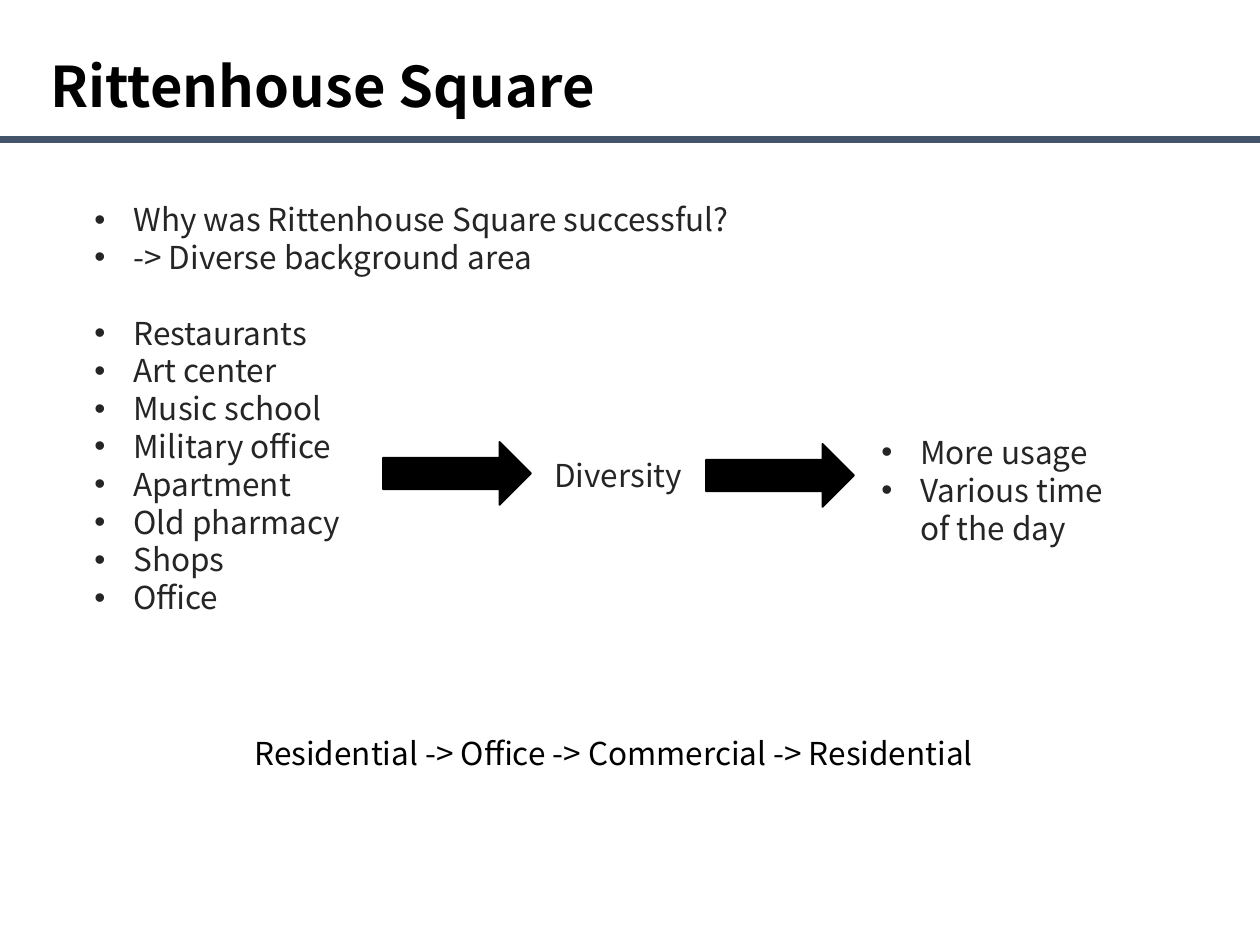
from lxml.etree import SubElement
from pptx import Presentation
from pptx.dml.color import RGBColor
from pptx.enum.shapes import MSO_CONNECTOR, MSO_SHAPE
from pptx.enum.text import MSO_AUTO_SIZE
from pptx.oxml.ns import qn
from pptx.util import Emu, Pt

FONT = "Noto Sans CJK KR"
BLACK, GREY, SLATE = "000000", "252525", "44546A"
INDENT = 39
GAP = 21.6
CAUSE = ["Why was Rittenhouse Square successful?", "-> Diverse background area"]
USES = ["Restaurants", "Art center", "Music school", "Military office",
        "Apartment", "Old pharmacy", "Shops", "Office"]
GAINS = ["More usage", "Various time of the day"]


def px(num):
    """Turn px at 126 to the inch into EMU."""
    return Emu(round(num * 914400 / 126))


def tint(code):
    """Turn a hex string into a colour."""
    return RGBColor.from_string(code)


def bullet(para):
    """Give a paragraph a round bullet and a hanging indent."""
    props = para._p.get_or_add_pPr()
    props.set("marL", str(px(INDENT)))
    props.set("indent", str(-px(INDENT)))
    SubElement(props, qn("a:buFont"), typeface="Arial")
    SubElement(props, qn("a:buChar"), char="•")


def write(slide, box, groups, color=GREY, size=18, bold=False, dots=False):
    """Place groups of lines in a text box, with a gap between groups."""
    frame = slide.shapes.add_textbox(*map(px, box)).text_frame
    frame.word_wrap = True
    frame.auto_size = MSO_AUTO_SIZE.SHAPE_TO_FIT_TEXT
    para = None
    for group in groups:
        for pos, line in enumerate(group):
            fresh = para is None
            para = frame.paragraphs[0] if fresh else frame.add_paragraph()
            if dots:
                bullet(para)
            if pos == 0 and not fresh:
                para.space_before = Pt(GAP)
            run = para.add_run()
            run.text = line
            font = run.font
            font.name, font.size, font.bold = FONT, Pt(size), bold
            font.color.rgb = tint(color)


def arrow(slide, box):
    """Place a solid black arrow that points right."""
    shape = slide.shapes.add_shape(MSO_SHAPE.RIGHT_ARROW, *map(px, box))
    shape.shadow.inherit = False
    shape.fill.solid()
    shape.fill.fore_color.rgb = tint(BLACK)
    shape.line.color.rgb = tint(BLACK)
    shape.line.width = Pt(1)


def header(slide, box):
    """Place the title and the rule along the foot of the box."""
    left, top, wide, high = box
    foot = px(top + high)
    rule = slide.shapes.add_connector(
        MSO_CONNECTOR.STRAIGHT, px(left), foot, px(left + wide), foot)
    rule.line.color.rgb = tint(SLATE)
    rule.line.width = Pt(4)
    SubElement(rule._element.spPr, qn("a:effectLst"))
    write(slide, (left + 38, top + 45, 1061, 81), [["Rittenhouse Square"]],
          BLACK, 32, True)


def flow(slide, box):
    """Place the list of uses and the chain that leads to its gains."""
    left, top, wide, high = box
    write(slide, (left, top, 748, high), [CAUSE, USES], dots=True)
    arrow(slide, (left + 301, top + 248, 148, 63))
    write(slide, (left + 460, top + 256, 251, 50), [["Diversity"]])
    arrow(slide, (left + 624, top + 250, 148, 63))
    write(slide, (left + wide - 251, top + 233, 251, 127), [GAINS], dots=True)


def main():
    """Build the slide and save it."""
    deck = Presentation()
    deck.slide_width, deck.slide_height = px(1260), px(945)
    slide = deck.slides.add_slide(deck.slide_layouts[6])
    header(slide, (0, 0, 1260, 140))
    flow(slide, (82, 194, 1038, 432))
    write(slide, (242, 728, 777, 50),
          [["Residential -> Office -> Commercial -> Residential"]], BLACK)
    deck.save("out.pptx")


if __name__ == "__main__":
    main()
